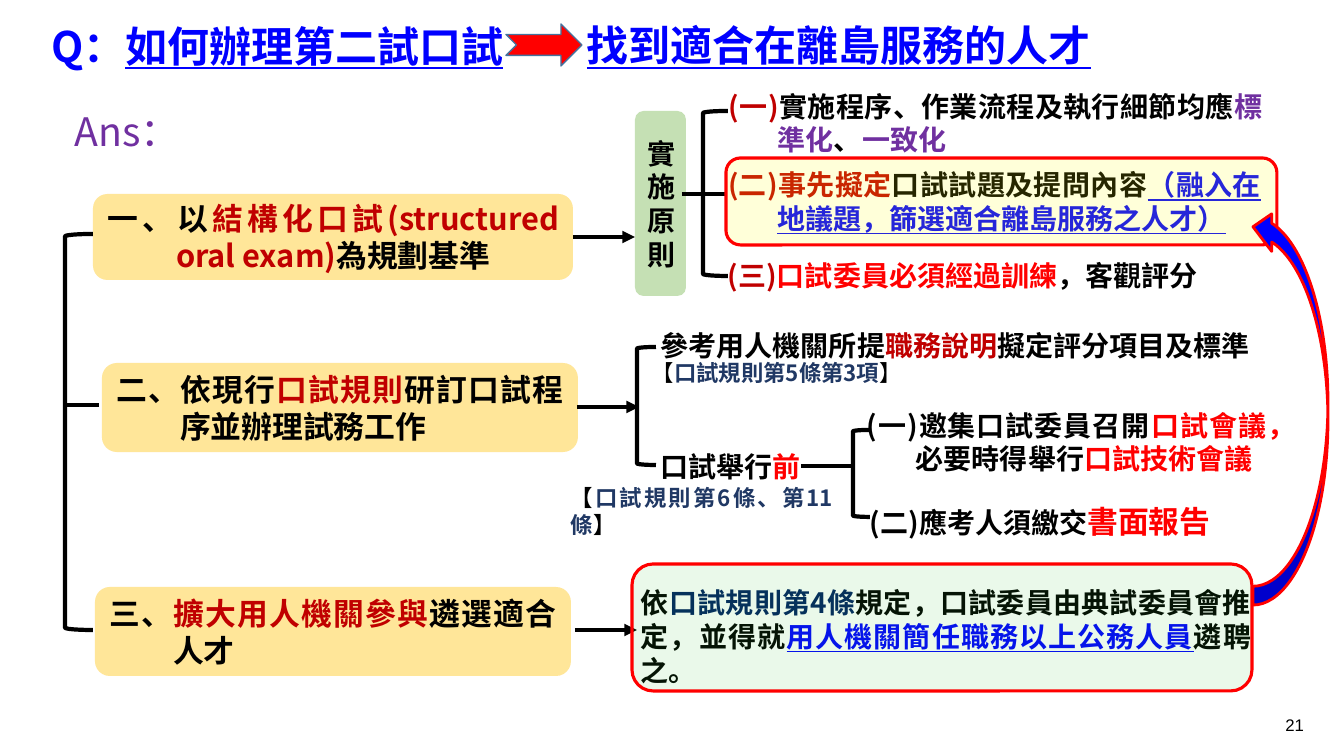
from lxml import etree
from pptx import Presentation
from pptx.dml.color import RGBColor
from pptx.enum.shapes import MSO_CONNECTOR, MSO_SHAPE
from pptx.enum.text import MSO_ANCHOR, MSO_AUTO_SIZE, PP_ALIGN
from pptx.oxml.ns import qn
from pptx.util import Emu, Pt

STRAIGHT = MSO_CONNECTOR.STRAIGHT
PANEL = MSO_SHAPE.FLOWCHART_ALTERNATE_PROCESS
BRACKET = MSO_SHAPE.LEFT_BRACKET
FRAME = MSO_SHAPE.ROUNDED_RECTANGLE
CURVED_ARROW = MSO_SHAPE.CURVED_UP_ARROW
NOTCHED_ARROW = MSO_SHAPE.NOTCHED_RIGHT_ARROW
TOP, MIDDLE = MSO_ANCHOR.TOP, MSO_ANCHOR.MIDDLE
LEFT, CENTER, RIGHT, JUSTIFY = (PP_ALIGN.LEFT, PP_ALIGN.CENTER,
                                PP_ALIGN.RIGHT, PP_ALIGN.JUSTIFY)

FONT = "Noto Sans CJK SC"
EMU_PER_PX = 914400 / 100.8
BLACK, RED, DARK_RED, BLUE = "000000", "FF0000", "C00000", "0000FF"
PURPLE, NAVY, DEEP_NAVY = "7030A0", "203864", "002060"
AMBER, SAGE = "FFE699", "C5E0B4"
UNDERLINE, PLAIN = {"underline": True}, {"bold": False}

# Boxes are (left, top, width, height); runs are (text, colour, optional format).
TITLE_BOX = (41, 15, 542, 61)
TITLE = [("Q：", BLUE), ("如何辦理第二試口試", BLUE, UNDERLINE)]

TEXT_BOXES = [
    ((577, 15, 542, 61), [("找到適合在離島服務的人才", BLUE, UNDERLINE)],
     {"size": 30, "align": LEFT}),
    ((65, 102, 127, 57), [("Ans：", PURPLE, PLAIN)], {"size": 28}),
    ((642, 354, 370, 37),
     [("【", BLACK, PLAIN), ("口試規則第5條第3項", NAVY), ("】", BLACK, PLAIN)],
     {"size": 16}),
    ((561, 479, 282, 37),
     [("【", BLACK), ("口試規則第6條、第11條", NAVY), ("】", BLACK)], {"size": 16}),
    ((631, 581, 630, 112),
     [("依", BLACK), ("口試規則第4條", DEEP_NAVY),
      ("規定，口試委員由典試委員會推定，並得就", BLACK),
      ("用人機關簡任職務以上公務人員", BLUE, UNDERLINE), ("遴聘之。", BLACK)], {}),
    ((1012, 705, 302, 40), [("21", BLACK, PLAIN)],
     {"size": 12, "align": RIGHT, "anchor": MIDDLE, "font": "Arial"}),
]

PANELS = [
    ((93, 194, 480, 86), AMBER,
     [("一、以", BLACK), ("結構化口試(structured oral exam)", DARK_RED),
      ("為規劃基準", BLACK)], {"size": 22, "hanging": 69}),
    ((102, 363, 476, 89), AMBER,
     [("二、依現行", BLACK), ("口試規則", DARK_RED),
      ("研訂口試程序並辦理試務工作", BLACK)], {"size": 22, "hanging": 64}),
    ((95, 587, 476, 89), AMBER,
     [("三、", BLACK), ("擴大用人機關參與", DARK_RED), ("遴選適合人才", BLACK)],
     {"size": 22, "hanging": 64}),
    ((635, 111, 51, 185), SAGE, [("實施原則", BLACK)], {"align": CENTER}),
    ((715, 82, 561, 82), None,
     [("(一)", DARK_RED), ("實施程序、作業流程及執行細節均應", BLACK),
      ("標準化", PURPLE), ("、", BLACK), ("一致化", PURPLE)], {"hanging": 49}),
    ((714, 159, 561, 85), None,
     [("(二)事先擬定", DARK_RED), ("口試試題及提問內容", BLACK),
      ("（融入在地議題，篩選適合離島服務之人才）", BLUE, UNDERLINE)],
     {"hanging": 49}),
    ((715, 246, 519, 58), None,
     [("(三)", DARK_RED), ("口試委員必須經過訓練", RED), ("，客觀評分", BLACK)],
     {"hanging": 49}),
    ((648, 317, 615, 57), None,
     [("參考用人機關所提", BLACK), ("職務說明", DARK_RED),
      ("擬定評分項目及標準", BLACK)], {}),
    ((648, 438, 168, 57), None, [("口試舉行", BLACK), ("前", RED)], {}),
    ((852, 391, 430, 102), None,
     [("(一)邀集口試委員召開", BLACK), ("口試會議，", RED),
      ("必要時得舉行", BLACK), ("口試技術會議", RED)], {"hanging": 49}),
    ((857, 493, 413, 59), None,
     [("(二)應考人須繳交", BLACK), ("書面報告", RED, {"size": 22})], {}),
]

BRACKETS = [(65, 234, 28, 396), (703, 111, 25, 165),
            (637, 347, 19, 118), (853, 430, 17, 87)]

# Horizontal lines: left, right, y, arrowhead
LINES = [
    (573, 635, 237, True), (577, 639, 407, True), (575, 637, 630, True),
    (65, 99, 405, False), (682, 727, 194, False), (801, 852, 466, False),
]

# Shape, box, fill, opacity %, line colour, line points, rotation
HIGHLIGHTS = [
    (FRAME, (726, 158, 551, 87), "FFFF00", 15, RED, 2.25, 0),
    (CURVED_ARROW, (1092, 369, 397, 75), BLUE, 100, RED, 2, 270),
    (FRAME, (632, 564, 620, 127), "33CC33", 10, RED, 2.25, 0),
    (NOTCHED_ARROW, (506, 24, 76, 42), RED, 100, "43739E", 1, 0),
]


def px(length):
    return Emu(round(length * EMU_PER_PX))


def place(box):
    return [px(length) for length in box]


def rgb(colour):
    return RGBColor.from_string(colour)


def write(frame, runs, size=20, align=JUSTIFY, anchor=TOP, hanging=0, font=FONT):
    """Fill a text frame with one paragraph of formatted runs."""
    frame.word_wrap = True
    frame.auto_size = MSO_AUTO_SIZE.NONE
    frame.vertical_anchor = anchor
    paragraph = frame.paragraphs[0]
    paragraph.alignment = align
    paragraph.line_spacing = Pt(size * 1.2)
    if hanging:
        properties = paragraph._p.get_or_add_pPr()
        properties.set("marL", str(px(hanging)))
        properties.set("indent", str(-px(hanging)))
    for text, colour, *extra in runs:
        style = {"size": size, "bold": True, "underline": False}
        style.update(*extra)
        run = paragraph.add_run()
        run.text = text
        run.font.name = font
        run.font.size = Pt(style["size"])
        run.font.bold = style["bold"]
        run.font.underline = style["underline"]
        run.font.color.rgb = rgb(colour)
        east_asian = etree.SubElement(run._r.get_or_add_rPr(), qn("a:ea"))
        east_asian.set("typeface", font)


def add_shape(slide, kind, box, fill=None, line=None, points=3, opacity=100):
    shape = slide.shapes.add_shape(kind, *place(box))
    shape.shadow.inherit = False
    if fill:
        shape.fill.solid()
        shape.fill.fore_color.rgb = rgb(fill)
        if opacity < 100:
            colour = shape._element.spPr.find(".//" + qn("a:srgbClr"))
            etree.SubElement(colour, qn("a:alpha")).set("val", str(opacity * 1000))
    else:
        shape.fill.background()
    if line:
        shape.line.color.rgb = rgb(line)
        shape.line.width = Pt(points)
    else:
        shape.line.fill.background()
    return shape


def add_line(slide, left, right, y, arrowhead):
    line = slide.shapes.add_connector(STRAIGHT, px(left), px(y), px(right), px(y))
    line.line.color.rgb = rgb(BLACK)
    line.line.width = Pt(3)
    if arrowhead:
        etree.SubElement(line.line._get_or_add_ln(), qn("a:tailEnd")).set("type", "triangle")
    etree.SubElement(line._element.spPr, qn("a:effectLst"))


def main():
    deck = Presentation()
    deck.slide_width, deck.slide_height = px(1344), px(756)
    slide = deck.slides.add_slide(deck.slide_layouts[5])

    title = slide.shapes.title
    title.left, title.top, title.width, title.height = place(TITLE_BOX)
    write(title.text_frame, TITLE, size=30, align=LEFT)

    for box, fill, runs, style in PANELS:
        panel = add_shape(slide, PANEL, box, fill)
        write(panel.text_frame, runs, anchor=MIDDLE, **style)
    for box in BRACKETS:
        add_shape(slide, BRACKET, box, line=BLACK)
    for line in LINES:
        add_line(slide, *line)
    for box, runs, style in TEXT_BOXES:
        write(slide.shapes.add_textbox(*place(box)).text_frame, runs, **style)
    for kind, box, fill, opacity, line, points, rotation in HIGHLIGHTS:
        shape = add_shape(slide, kind, box, fill, line, points, opacity)
        shape.rotation = rotation

    deck.save("out.pptx")


if __name__ == "__main__":
    main()
